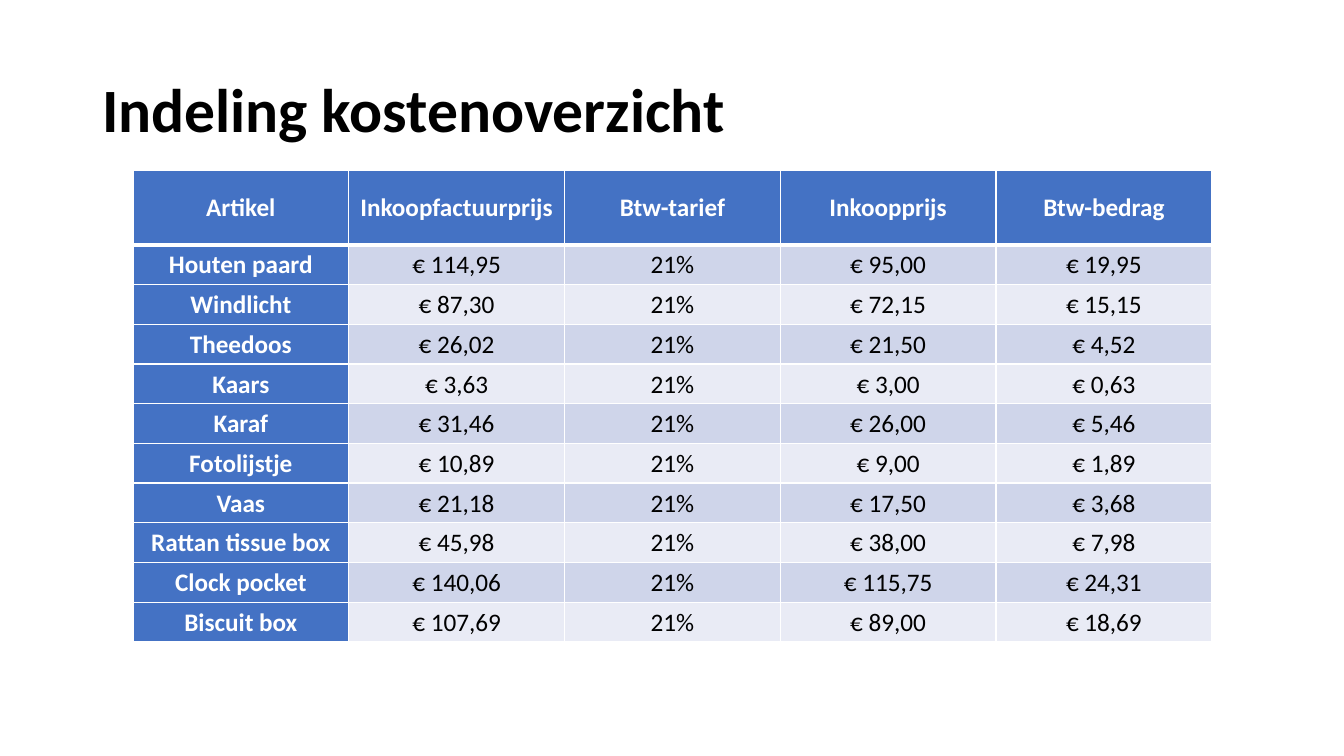
from dataclasses import astuple, dataclass

from lxml import etree
from pptx import Presentation
from pptx import util as u
from pptx.dml.color import RGBColor
from pptx.enum import text
from pptx.oxml.ns import qn

EMU_PER_PX = 914400 / 100.8
FONT = "Calibri"
BLACK = RGBColor(0x00, 0x00, 0x00)
WHITE = RGBColor(0xFF, 0xFF, 0xFF)
BLUE = RGBColor(0x44, 0x72, 0xC4)
BANDS = (RGBColor(0xCF, 0xD5, 0xEA), RGBColor(0xE9, 0xEB, 0xF5))

TABLE_WIDTH = 1079
HEADER_HEIGHT = 75
BODY_HEIGHT = 397
THIN, THICK = u.Pt(1), u.Pt(3)


@dataclass(frozen=True)
class CostLine:
    article: str
    invoice_price: str
    vat_rate: str
    purchase_price: str
    vat_amount: str


HEADER = CostLine("Artikel", "Inkoopfactuurprijs", "Btw-tarief", "Inkoopprijs", "Btw-bedrag")
COST_LINES = (
    CostLine("Houten paard", "€ 114,95", "21%", "€ 95,00", "€ 19,95"),
    CostLine("Windlicht", "€ 87,30", "21%", "€ 72,15", "€ 15,15"),
    CostLine("Theedoos", "€ 26,02", "21%", "€ 21,50", "€ 4,52"),
    CostLine("Kaars", "€ 3,63", "21%", "€ 3,00", "€ 0,63"),
    CostLine("Karaf", "€ 31,46", "21%", "€ 26,00", "€ 5,46"),
    CostLine("Fotolijstje", "€ 10,89", "21%", "€ 9,00", "€ 1,89"),
    CostLine("Vaas", "€ 21,18", "21%", "€ 17,50", "€ 3,68"),
    CostLine("Rattan tissue box", "€ 45,98", "21%", "€ 38,00", "€ 7,98"),
    CostLine("Clock pocket", "€ 140,06", "21%", "€ 115,75", "€ 24,31"),
    CostLine("Biscuit box", "€ 107,69", "21%", "€ 89,00", "€ 18,69"),
)


def px(length: int) -> u.Emu:
    return u.Emu(round(length * EMU_PER_PX))


def add_run(paragraph, wording: str, size: int, color: RGBColor, bold: bool) -> None:
    run = paragraph.add_run()
    run.text = wording
    run.font.name = FONT
    run.font.size = u.Pt(size)
    run.font.bold = bold
    run.font.color.rgb = color


def set_borders(cell, top: int, bottom: int) -> None:
    """Give the cell white borders; call this before setting its fill."""
    properties = cell._tc.get_or_add_tcPr()
    for side, width in (("L", THIN), ("R", THIN), ("T", top), ("B", bottom)):
        line = etree.SubElement(properties, qn(f"a:ln{side}"), w=str(width))
        fill = etree.SubElement(line, qn("a:solidFill"))
        etree.SubElement(fill, qn("a:srgbClr"), val=str(WHITE))


def format_cell(cell, wording: str, row: int, column: int) -> None:
    is_heading = row == 0 or column == 0
    set_borders(cell, THICK if row == 1 else THIN, THICK if row == 0 else THIN)
    cell.fill.solid()
    cell.fill.fore_color.rgb = BLUE if is_heading else BANDS[(row - 1) % 2]
    cell.margin_left = cell.margin_right = cell.margin_top = px(1)
    cell.margin_bottom = 0
    cell.vertical_anchor = text.MSO_ANCHOR.MIDDLE
    paragraph = cell.text_frame.paragraphs[0]
    paragraph.alignment = text.PP_ALIGN.CENTER
    add_run(paragraph, wording, 18, WHITE if is_heading else BLACK, is_heading)


def add_title(slide, wording: str) -> None:
    title = slide.shapes.title
    title.left, title.top, title.width, title.height = px(92), px(40), px(1159), px(146)
    frame = title.text_frame
    frame.auto_size = text.MSO_AUTO_SIZE.NONE
    frame.vertical_anchor = text.MSO_ANCHOR.MIDDLE
    paragraph = frame.paragraphs[0]
    paragraph.alignment = text.PP_ALIGN.LEFT
    paragraph.line_spacing = 0.9
    add_run(paragraph, wording, 44, BLACK, True)


def add_cost_table(slide) -> None:
    rows = [astuple(line) for line in (HEADER, *COST_LINES)]
    table = slide.shapes.add_table(
        len(rows), len(rows[0]), px(133), px(170), px(TABLE_WIDTH), px(HEADER_HEIGHT + BODY_HEIGHT)
    ).table
    table.first_col = True
    for row, values in enumerate(rows):
        table.rows[row].height = px(BODY_HEIGHT) // len(COST_LINES) if row else px(HEADER_HEIGHT)
        for column, wording in enumerate(values):
            format_cell(table.cell(row, column), wording, row, column)


def main() -> None:
    presentation = Presentation()
    presentation.slide_width, presentation.slide_height = px(1344), px(756)
    slide = presentation.slides.add_slide(presentation.slide_layouts[5])
    add_title(slide, "Indeling kostenoverzicht")
    add_cost_table(slide)
    presentation.save("out.pptx")


if __name__ == "__main__":
    main()
